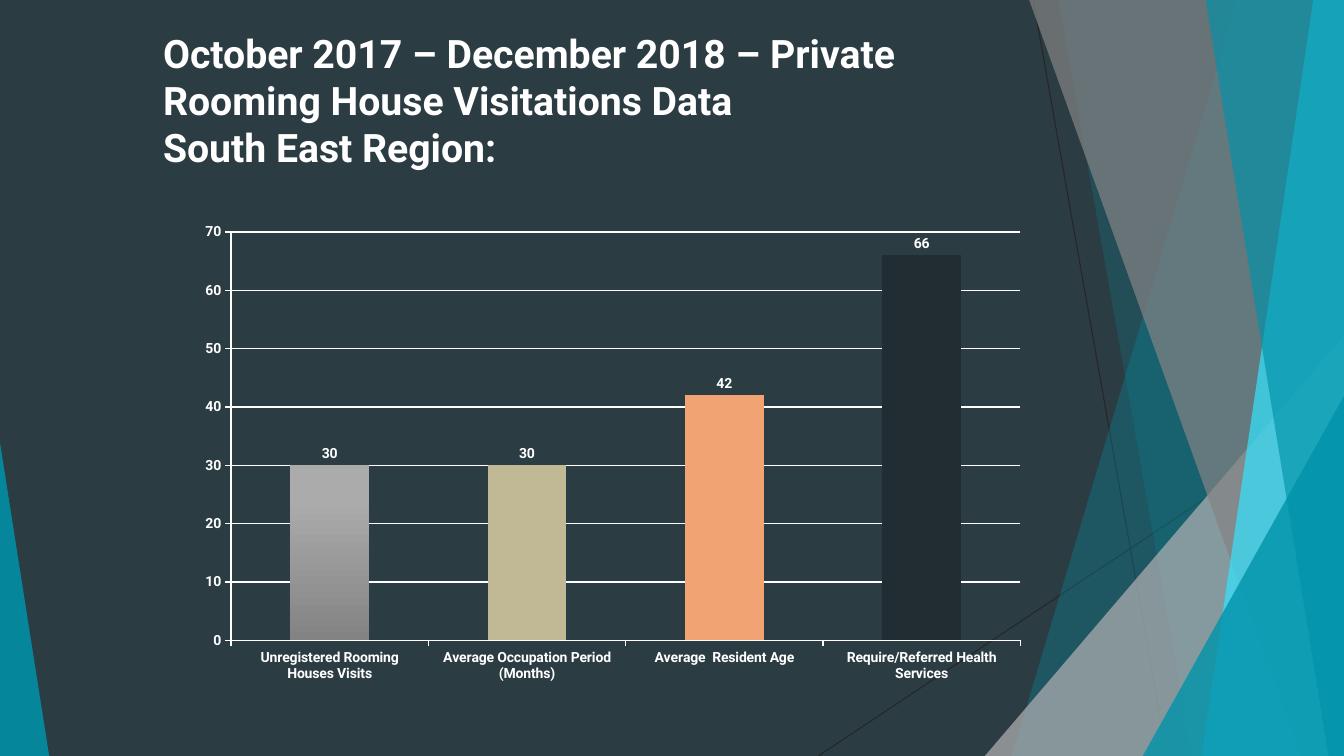
from dataclasses import dataclass

from lxml import etree
from pptx import Presentation
from pptx.chart import data as chart_data
from pptx.dml import color as dml
from pptx.enum import chart as ch, shapes, text
from pptx.oxml import ns
from pptx.util import Cm, Pt

WIDTH, HEIGHT = 33.87, 19.05


@dataclass(frozen=True)
class Theme:
    background: str = "2C3C43"
    ink: str = "FFFFFF"
    hairline: str = "262626"
    teal: str = "0093AA"
    cyan: str = "33E3FF"
    silver: str = "B0B0B0"
    grey: str = "848484"
    bar_gradient: tuple = ("838383", "ABABAB")
    bars: tuple = ("C1B995", "F1A374", "212D32")
    font: str = "Roboto"
    title_size: int = 28
    chart_size: int = 10
    thin: float = 0.75
    axis: float = 1


THEME = Theme()


def rgb(value):
    return dml.RGBColor.from_string(value)


def style_font(font, size):
    font.name, font.size, font.bold = THEME.font, Pt(size), True
    font.color.rgb = rgb(THEME.ink)


def style_facet(facet, color, opacity):
    """Fill a decorative facet with a see-through colour, without outline."""
    facet.shadow.inherit = False
    facet.line.fill.background()
    facet.fill.solid()
    facet.fill.fore_color.rgb = rgb(color)
    tint = facet.fill._xPr.find(".//" + ns.qn("a:srgbClr"))
    etree.SubElement(tint, ns.qn("a:alpha"), val=str(opacity * 1000))


def add_hairline(slide, start, end):
    hairline = slide.shapes.add_connector(
        shapes.MSO_CONNECTOR.STRAIGHT, *(Cm(v) for v in start + end))
    hairline.line.color.rgb = rgb(THEME.hairline)
    hairline.line.width = Pt(THEME.thin)
    etree.SubElement(hairline._element.spPr, ns.qn("a:effectLst"))


def add_band(slide, top_x, bottom_x, color, opacity):
    """Full-height facet between a slanted left side and the right slide edge."""
    top = Cm(-0.02)
    outline = slide.shapes.build_freeform(Cm(top_x), top)
    outline.add_line_segments([
        (Cm(WIDTH), top), (Cm(WIDTH), Cm(HEIGHT)), (Cm(bottom_x), Cm(HEIGHT))])
    style_facet(outline.convert_to_shape(), color, opacity)


def add_corner(slide, left, right, top, apex, color, opacity):
    """Triangle standing on the bottom edge of the slide."""
    corner = slide.shapes.add_shape(
        shapes.MSO_SHAPE.ISOSCELES_TRIANGLE,
        Cm(left), Cm(top), Cm(right - left), Cm(HEIGHT - top))
    corner.adjustments[0] = apex
    style_facet(corner, color, opacity)


def add_facets(slide):
    add_hairline(slide, (26.04, 0), (29.41, HEIGHT))
    add_hairline(slide, (WIDTH, 10.24), (20.62, HEIGHT))
    add_band(slide, 31.19, 25.5, THEME.teal, 30)
    add_band(slide, 26.67, 30.05, THEME.teal, 20)
    add_corner(slide, 24.82, WIDTH, 8.46, 1, THEME.silver, 72)
    add_band(slide, 25.93, 32.79, THEME.grey, 70)
    add_band(slide, 33.1, 30.28, THEME.cyan, 70)
    add_band(slide, 30.38, 33.48, THEME.teal, 65)
    add_corner(slide, 28.8, WIDTH, 9.98, 1, THEME.teal, 80)
    add_corner(slide, 0, 1.24, 11.15, 0, THEME.teal, 85)


def add_title(slide, lines):
    title = slide.shapes.add_textbox(
        Cm(3.86), Cm(0.61), Cm(20.24), Cm(3.84)).text_frame
    title.word_wrap = True
    title.auto_size = text.MSO_AUTO_SIZE.SHAPE_TO_FIT_TEXT
    for number, line in enumerate(lines):
        paragraph = title.add_paragraph() if number else title.paragraphs[0]
        run = paragraph.add_run()
        run.text = line
        style_font(run.font, THEME.title_size)


def style_axis(axis):
    axis.major_tick_mark = ch.XL_TICK_MARK.OUTSIDE
    axis.minor_tick_mark = ch.XL_TICK_MARK.NONE
    style_font(axis.tick_labels.font, THEME.chart_size)
    style_line(axis.format.line)


def style_line(line):
    line.color.rgb = rgb(THEME.ink)
    line.width = Pt(THEME.axis)


def fill_bars(series):
    gradient = series.points[0].format.fill
    gradient.gradient()
    gradient.gradient_angle = 90
    for stop, color, position in zip(
            gradient.gradient_stops, THEME.bar_gradient, (0, 0.8)):
        stop.color.rgb = rgb(color)
        stop.position = position
    for number, color in enumerate(THEME.bars, start=1):
        fill = series.points[number].format.fill
        fill.solid()
        fill.fore_color.rgb = rgb(color)


def add_visits_chart(slide, results):
    visits = chart_data.CategoryChartData()
    visits.categories = list(results)
    visits.add_series("Series 1", results.values())
    chart = slide.shapes.add_chart(
        ch.XL_CHART_TYPE.COLUMN_CLUSTERED,
        Cm(4.75), Cm(5.41), Cm(21.39), Cm(12.01), visits).chart
    chart.has_legend = chart.has_title = False
    style_font(chart.font, THEME.chart_size)

    style_axis(chart.category_axis)
    scale = chart.value_axis
    style_axis(scale)
    scale.minimum_scale, scale.maximum_scale, scale.major_unit = 0, 70, 10
    style_line(scale.major_gridlines.format.line)

    plot = chart.plots[0]
    plot.gap_width = 150
    plot.vary_by_categories = False
    fill_bars(plot.series[0])
    plot.has_data_labels = True
    labels = plot.data_labels
    labels.show_value = True
    labels.position = ch.XL_LABEL_POSITION.OUTSIDE_END
    style_font(labels.font, THEME.chart_size)


def main():
    deck = Presentation()
    deck.slide_width, deck.slide_height = Cm(WIDTH), Cm(HEIGHT)
    slide = deck.slides.add_slide(deck.slide_layouts[6])
    slide.background.fill.solid()
    slide.background.fill.fore_color.rgb = rgb(THEME.background)
    add_facets(slide)
    add_visits_chart(slide, {
        "Unregistered Rooming Houses Visits": 30,
        "Average Occupation Period (Months)": 30,
        "Average  Resident Age": 42,
        "Require/Referred Health Services": 66,
    })
    add_title(slide, [
        "October 2017 – December 2018 – Private Rooming House Visitations Data",
        "South East Region:",
    ])
    deck.save("out.pptx")


if __name__ == "__main__":
    main()
